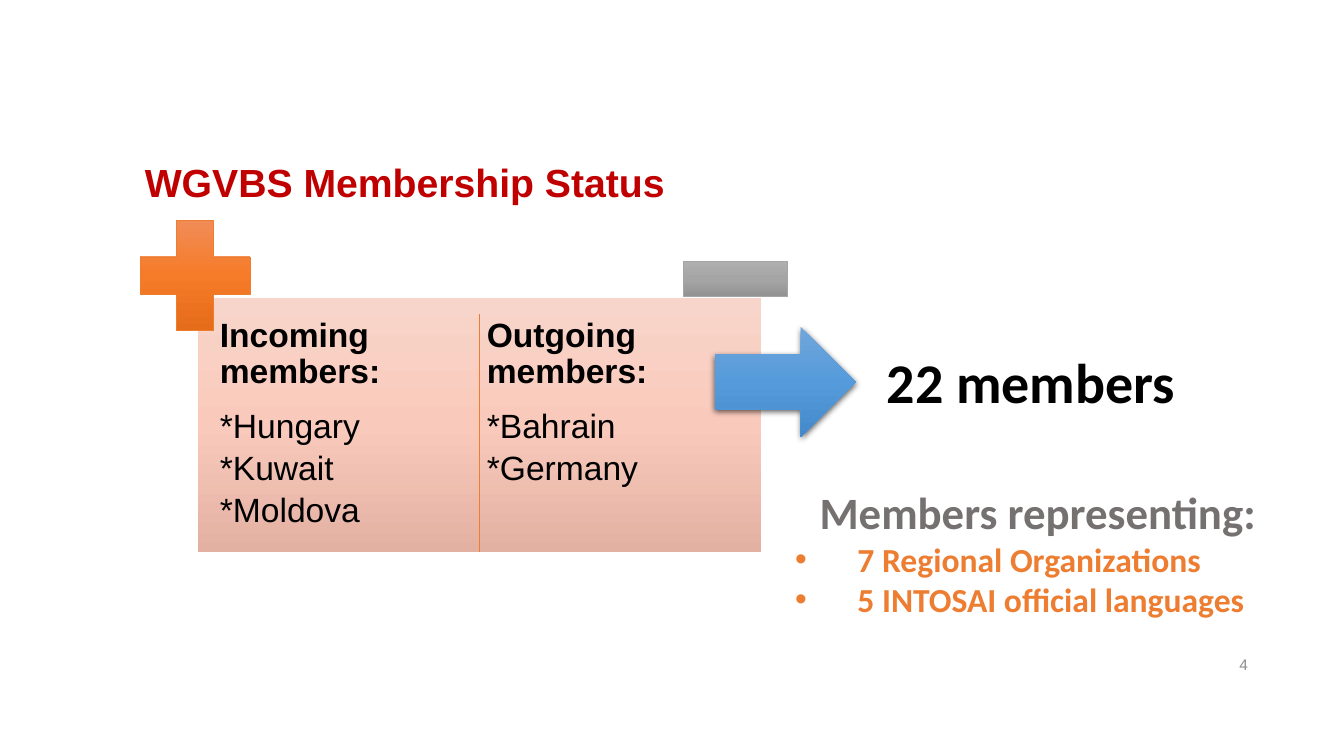
from copy import deepcopy
from dataclasses import dataclass

from lxml.etree import SubElement
from pptx import Presentation
from pptx.dml.color import RGBColor
from pptx.enum.shapes import MSO_CONNECTOR, MSO_SHAPE as Preset
from pptx.enum.text import MSO_ANCHOR as Anchor, PP_ALIGN as Align
from pptx.oxml.ns import qn
from pptx.util import Cm, Pt


@dataclass(frozen=True)
class Theme:
    heading_font: str = "Arial"
    body_font: str = "Calibri"
    red: str = "C00000"
    black: str = "000000"
    orange: str = "ED7D31"
    gray: str = "A5A5A5"
    dark_gray: str = "767171"
    number_gray: str = "8C8C8C"
    peach_fade: tuple = ("F8D5CA", "F9CABC", "E2B1A2")
    orange_fade: tuple = ("F18C57", "F67B28", "E56C19")
    gray_fade: tuple = ("AFAFAF", "A5A5A5", "939393")
    blue_fade: tuple = ("71A6DB", "559BDB", "448ACA")
    number_size: int = 11
    text_size: int = 24
    title_size: int = 28
    subtitle_size: int = 32
    total_size: int = 40


THEME = Theme()


def add_text(page, place, lines, anchor=Anchor.TOP, inset=None):
    """Add a wrapping text box with one paragraph per line; return its paragraphs."""
    box = page.shapes.add_textbox(*map(Cm, place))
    frame = box.text_frame
    frame.word_wrap = True
    frame.vertical_anchor = anchor
    if inset is not None:
        frame.margin_left = frame.margin_right = Cm(inset)
        frame.margin_top = frame.margin_bottom = Cm(inset)
    frame.text = "\n".join(lines)
    return frame.paragraphs


def style(para, font, size, color, bold=True, align=Align.LEFT):
    para.alignment = align
    for span in para.runs:
        span.font.name = font
        span.font.size = Pt(size)
        span.font.bold = bold
        span.font.color.rgb = RGBColor.from_string(color)


def add_faded_shape(page, preset, place, fade, outline=None):
    """Add a shape with a three-stop gradient running from top to bottom."""
    shape = page.shapes.add_shape(preset, *map(Cm, place))
    shape.shadow.inherit = False
    shape.fill.gradient()
    shape.fill.gradient_angle = 270
    stop_list = next(shape.element.spPr.iter(qn("a:gsLst")))
    stop_list.insert(1, deepcopy(stop_list[0]))
    for index, stop in enumerate(shape.fill.gradient_stops):
        stop.color.rgb = RGBColor.from_string(fade[index])
        stop.position = index / 2
    if outline:
        shape.line.color.rgb = RGBColor.from_string(outline)
        shape.line.width = Pt(0.5)
    else:
        shape.line.fill.background()
    return shape


def add_drop_shadow(shape):
    effects = shape.element.spPr.find(qn("a:effectLst"))
    shadow = SubElement(effects, qn("a:outerShdw"), blurRad=str(Pt(4.5)),
                        dist=str(Pt(1.5)), dir="5400000", rotWithShape="0")
    color = SubElement(shadow, qn("a:srgbClr"), val=THEME.black)
    SubElement(color, qn("a:alpha"), val="63000")


def add_divider(page, x, top, bottom):
    line = page.shapes.add_connector(
        MSO_CONNECTOR.STRAIGHT, Cm(x), Cm(top), Cm(x), Cm(bottom))
    line.line.color.rgb = RGBColor.from_string(THEME.orange)
    line.line.width = Pt(1)
    SubElement(line.element.spPr, qn("a:effectLst"))


def add_member_column(page, left, heading, countries):
    lines = [heading] + [f"*{country}" for country in countries]
    paras = add_text(page, (left, 7.9, 6.6, 6.27), lines, inset=0.13)
    for index, para in enumerate(paras):
        style(para, THEME.heading_font, THEME.text_size, THEME.black, bold=index == 0)
        para.line_spacing = 0.9
        para.space_after = Pt(4 if index else 13)


def add_bullet(para):
    properties = para._p.get_or_add_pPr()
    properties.set("marL", str(Cm(1.57)))
    properties.set("indent", str(-Cm(1.57)))
    SubElement(properties, qn("a:buFont"), typeface="Arial")
    SubElement(properties, qn("a:buChar"), char="•")


def add_representation(page):
    title, *points = add_text(page, (19.79, 12.09, 12.73, 4.52), [
        "Members representing:",
        "7 Regional Organizations",
        "5 INTOSAI official languages",
    ])
    style(title, THEME.body_font, THEME.subtitle_size, THEME.dark_gray, align=Align.CENTER)
    for point in points:
        add_bullet(point)
        style(point, THEME.body_font, THEME.text_size, THEME.orange)


def main():
    deck = Presentation()
    deck.slide_width, deck.slide_height = Cm(33.87), Cm(19.05)
    page = deck.slides.add_slide(deck.slide_layouts[6])

    number, = add_text(page, (24.08, 16.23, 7.62, 1.02), ["4"], Anchor.MIDDLE)
    style(number, THEME.heading_font, THEME.number_size, THEME.number_gray,
          bold=False, align=Align.RIGHT)
    title, = add_text(page, (3.4, 2.84, 22.73, 3.61),
                      ["WGVBS Membership Status"], Anchor.MIDDLE)
    style(title, THEME.heading_font, THEME.title_size, THEME.red)
    title.line_spacing = 0.9

    add_faded_shape(page, Preset.RECTANGLE, (4.98, 7.52, 14.2, 6.4), THEME.peach_fade)
    add_member_column(page, 5.41, "Incoming members:", ["Hungary", "Kuwait", "Moldova"])
    add_member_column(page, 12.14, "Outgoing members:", ["Bahrain", "Germany"])
    plus = add_faded_shape(page, Preset.CROSS, (3.53, 5.56, 2.77, 2.77),
                           THEME.orange_fade, THEME.orange)
    plus.adjustments[0] = 0.33
    add_faded_shape(page, Preset.RECTANGLE, (17.22, 6.58, 2.62, 0.89),
                    THEME.gray_fade, THEME.gray)
    add_divider(page, 12.09, 7.92, 13.92)

    arrow = add_faded_shape(page, Preset.RIGHT_ARROW, (18.01, 8.23, 3.56, 2.79),
                            THEME.blue_fade)
    add_drop_shadow(arrow)
    total, = add_text(page, (22.1, 8.64, 8.1, 1.96), ["22 members"])
    style(total, THEME.body_font, THEME.total_size, THEME.black)
    add_representation(page)

    deck.save("out.pptx")


if __name__ == "__main__":
    main()
